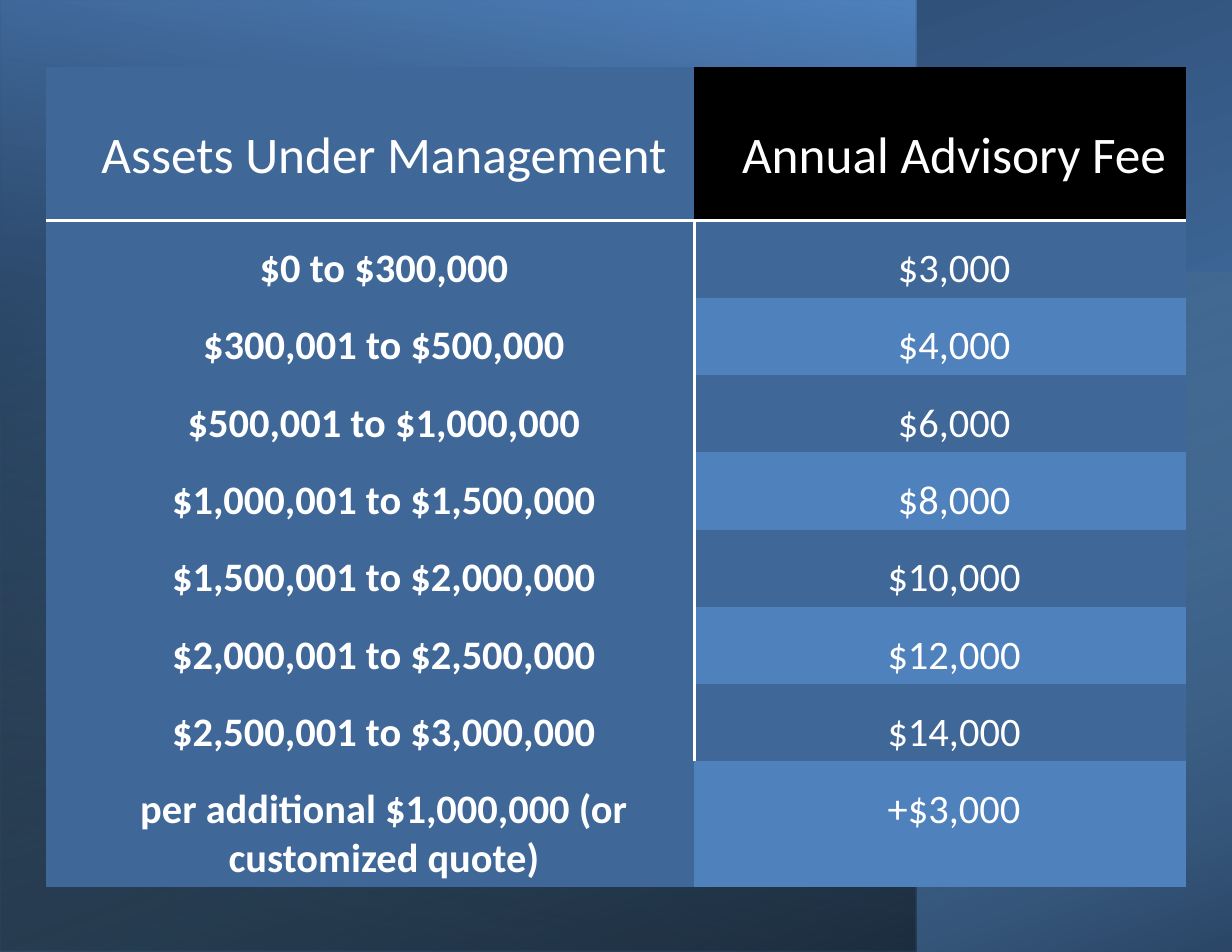
from lxml import etree
from pptx import Presentation
from pptx.dml.color import RGBColor
from pptx.enum.shapes import MSO_SHAPE
from pptx.enum.text import MSO_ANCHOR, PP_ALIGN
from pptx.oxml.ns import qn
from pptx.util import Inches, Pt

RECT, MID, TOP = MSO_SHAPE.RECTANGLE, MSO_ANCHOR.MIDDLE, MSO_ANCHOR.TOP
CENTER = PP_ALIGN.CENTER
WIDTH, HEIGHT = 11, 8.5
DEEP, BRIGHT, BLACK, WHITE = "3F6797", "4F81BD", "000000", "FFFFFF"
NO_STYLE = "{2D5ABB26-0587-4C30-8999-92F81FD0307C}"

# box, rotation, gradient angle, stops (position %, colour, opacity %)
LAYERS = [
    ((1.25, -1.25, HEIGHT, WIDTH), 270, 200, [(8, BRIGHT, 100), (100, "254061", 100)]),
    ((0, 0, 8.18, HEIGHT), 180, 80, [(8, BLACK, 52), (100, BRIGHT, 100)]),
    ((2.47, -0.03, 6.07, WIDTH), 270, 20, [(0, "93CDDD", 0), (100, BLACK, 46)]),
]
FEES = [
    ("Assets Under Management", "Annual Advisory Fee"),
    ("$0 to $300,000", "$3,000"),
    ("$300,001 to $500,000", "$4,000"),
    ("$500,001 to $1,000,000", "$6,000"),
    ("$1,000,001 to $1,500,000", "$8,000"),
    ("$1,500,001 to $2,000,000", "$10,000"),
    ("$2,000,001 to $2,500,000", "$12,000"),
    ("$2,500,001 to $3,000,000", "$14,000"),
    ("per additional $1,000,000 (or customized quote)", "+$3,000"),
]
LAST = len(FEES) - 1
COLS = [5.79, 4.39]
ROWS = [1.37] + [0.69] * (LAST - 1) + [1.12]


def add(parent, tag, **attrs):
    node = etree.SubElement(parent, qn(tag))
    for key, value in attrs.items():
        node.set(key, str(value))
    return node


def add_layer(slide, box, turn, angle, stops):
    """Add a mirrored, rotated rectangle with a see-through gradient."""
    shape = slide.shapes.add_shape(RECT, *map(Inches, box))
    shape.rotation = turn
    shape.shadow.inherit = False
    shape.line.fill.background()
    shape.fill.background()
    props = shape._element.spPr
    props.find(qn("a:xfrm")).set("flipH", "1")
    grad = etree.Element(qn("a:gradFill"), rotWithShape="1")
    marks = add(grad, "a:gsLst")
    for place, color, alpha in stops:
        mark = add(marks, "a:gs", pos=place * 1000)
        tint = add(mark, "a:srgbClr", val=color)
        add(tint, "a:alpha", val=alpha * 1000)
    add(grad, "a:lin", ang=angle * 60000, scaled=0)
    props.replace(props.find(qn("a:noFill")), grad)


def add_rule(cell, tag):
    """Draw a white border on one side; borders precede the cell fill."""
    props = cell._tc.get_or_add_tcPr()
    line = etree.Element(qn(tag), w=str(Pt(2)))
    add(add(line, "a:solidFill"), "a:srgbClr", val=WHITE)
    props.insert(0, line)


def fill_cell(cell, text, row, col):
    head = row == 0
    cell.margin_left = cell.margin_right = Inches(0.17)
    cell.margin_top, cell.margin_bottom = Inches(0.21), 0
    cell.vertical_anchor = MID if head else TOP
    if head:
        color = (DEEP, BLACK)[col]
    else:
        color = BRIGHT if col and row % 2 == 0 else DEEP
    cell.fill.solid()
    cell.fill.fore_color.rgb = RGBColor.from_string(color)

    para = cell.text_frame.paragraphs[0]
    para.alignment = CENTER
    para.space_after = Pt(6)
    indent = para._p.get_or_add_pPr()
    indent.set("marL", str(Inches(0.25)))
    indent.set("indent", "0")
    run = para.add_run()
    run.text = text
    font = run.font
    font.name, font.size = "Calibri", Pt(33 if head else 26)
    font.bold = not head and col == 0
    font.color.rgb = RGBColor.from_string(WHITE)

    if head:
        add_rule(cell, "a:lnB")
    elif col == 0 and row < LAST:
        add_rule(cell, "a:lnR")


def add_fees(slide):
    frame = slide.shapes.add_table(
        len(ROWS), len(COLS), Inches(0.41), Inches(0.6),
        Inches(sum(COLS)), Inches(sum(ROWS)))
    table = frame.table
    table.horz_banding = False
    table._tbl.tblPr.find(qn("a:tableStyleId")).text = NO_STYLE
    for col, width in zip(table.columns, COLS):
        col.width = Inches(width)
    for row, height in zip(table.rows, ROWS):
        row.height = Inches(height)
    for row, pair in enumerate(FEES):
        for col, text in enumerate(pair):
            fill_cell(table.cell(row, col), text, row, col)


def main():
    deck = Presentation()
    deck.slide_width, deck.slide_height = Inches(WIDTH), Inches(HEIGHT)
    slide = deck.slides.add_slide(deck.slide_layouts[6])
    for layer in LAYERS:
        add_layer(slide, *layer)
    add_fees(slide)
    deck.save("out.pptx")


if __name__ == "__main__":
    main()
